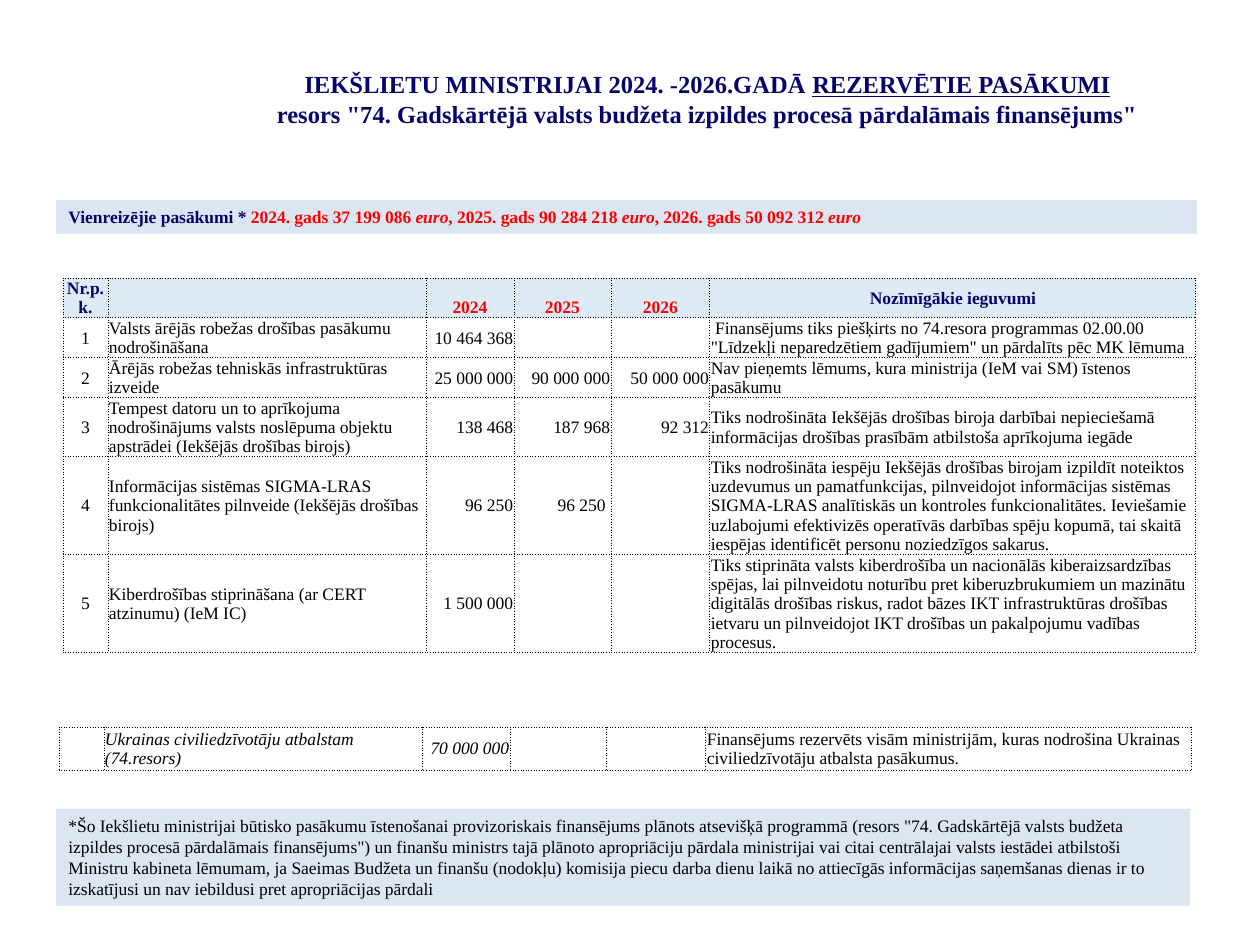
from lxml.etree import SubElement
from pptx import Presentation
from pptx.dml.color import RGBColor
from pptx.enum.shapes import MSO_SHAPE as Shape
from pptx.enum.text import MSO_ANCHOR as Anchor, MSO_AUTO_SIZE as Fit, PP_ALIGN as Align
from pptx.oxml.ns import qn
from pptx.util import Pt

SCALE = 914400 / 126  # EMU in one px


class Theme:
    font = "Times New Roman"
    navy, red, black = "04046C", "FF0000", "000000"
    bar, head = "DCE6F2", "DDEBF7"
    title, body = 14, 10
    rule = 0.5


TITLE = [
    [("IEKŠLIETU MINISTRIJAI 2024. -2026.GADĀ ", ""), ("REZERVĒTIE PASĀKUMI", "u")],
    [('resors "74. Gadskārtējā valsts budžeta izpildes procesā pārdalāmais finansējums"', "")],
]
YEARS = [
    ("2024. gads 37 199 086 ", "euro"),
    (", 2025. gads 90 284 218 ", "euro"),
    (", 2026. gads 50 092 312 ", "euro"),
]
NOTE = (
    "*Šo Iekšlietu ministrijai būtisko pasākumu īstenošanai provizoriskais finansējums plānots "
    'atsevišķā programmā (resors "74. Gadskārtējā valsts budžeta izpildes procesā pārdalāmais '
    'finansējums") un finanšu ministrs tajā plānoto apropriāciju pārdala ministrijai vai citai '
    "centrālajai valsts iestādei atbilstoši Ministru kabineta lēmumam, ja Saeimas Budžeta un "
    "finanšu (nodokļu) komisija piecu darba dienu laikā no attiecīgās informācijas saņemšanas "
    "dienas ir to izskatījusi un nav iebildusi pret apropriācijas pārdali"
)
HEAD = ["Nr.p.k.", "", "2024", "2025", "2026", "Nozīmīgākie ieguvumi"]
ITEMS = [
    ["1", "Valsts ārējās robežas drošības pasākumu nodrošināšana", "10 464 368", "", "",
     ' Finansējums tiks piešķirts no 74.resora programmas 02.00.00 "Līdzekļi neparedzētiem '
     'gadījumiem" un pārdalīts pēc MK lēmuma'],
    ["2", "Ārējās robežas tehniskās infrastruktūras izveide",
     "25 000 000", "90 000 000", "50 000 000",
     "Nav pieņemts lēmums, kura ministrija (IeM vai SM) īstenos pasākumu"],
    ["3", "Tempest datoru un to aprīkojuma nodrošinājums valsts noslēpuma objektu apstrādei "
     "(Iekšējās drošības birojs)", "138 468", "187 968", "92 312",
     "Tiks nodrošināta Iekšējās drošības biroja darbībai nepieciešamā informācijas drošības "
     "prasībām atbilstoša aprīkojuma iegāde"],
    ["4", "Informācijas sistēmas SIGMA-LRAS funkcionalitātes pilnveide (Iekšējās drošības birojs)",
     "96 250", "96 250 ", "",
     "Tiks nodrošināta iespēju Iekšējās drošības birojam izpildīt noteiktos uzdevumus un "
     "pamatfunkcijas, pilnveidojot informācijas sistēmas SIGMA-LRAS analītiskās un kontroles "
     "funkcionalitātes. Ieviešamie uzlabojumi efektivizēs operatīvās darbības spēju kopumā, "
     "tai skaitā iespējas identificēt personu noziedzīgos sakarus."],
    ["5", "Kiberdrošības stiprināšana (ar CERT atzinumu) (IeM IC)", "1 500 000", "", "",
     "Tiks stiprināta valsts kiberdrošība un nacionālās kiberaizsardzības spējas, lai "
     "pilnveidotu noturību pret kiberuzbrukumiem un mazinātu digitālās drošības riskus, "
     "radot bāzes IKT infrastruktūras drošības ietvaru un pilnveidojot IKT drošības un "
     "pakalpojumu vadības procesus."],
]
AID = ["", "Ukrainas civiliedzīvotāju atbalstam (74.resors)", "70 000 000", "", "",
       "Finansējums rezervēts visām ministrijām, kuras nodrošina Ukrainas civiliedzīvotāju "
       "atbalsta pasākumus."]

COLS = [45, 318, 88, 97, 99, 486]
ALIGNS = [Align.CENTER, Align.LEFT] + [Align.RIGHT] * 3 + [Align.LEFT]
MONEY = range(2, 5)


def px(n):
    return round(n * SCALE)


def rgb(code):
    return RGBColor.from_string(code)


def add_run(para, text, color, size=Theme.body, style=""):
    """Style holds any of the letters b, i and u."""
    run = para.add_run()
    run.text = text
    font = run.font
    font.name, font.size = Theme.font, Pt(size)
    font.color.rgb = rgb(color)
    font.bold, font.italic, font.underline = (key in style for key in "biu")


def add_bar(slide, left, top, width, height, runs):
    bar = slide.shapes.add_shape(Shape.RECTANGLE, *map(px, (left, top, width, height)))
    bar.shadow.inherit = False
    bar.fill.solid()
    bar.fill.fore_color.rgb = rgb(Theme.bar)
    bar.line.fill.background()
    frame = bar.text_frame
    frame.word_wrap = True
    frame.auto_size = Fit.SHAPE_TO_FIT_TEXT
    frame.vertical_anchor = Anchor.TOP
    para = frame.paragraphs[0]
    para.alignment = Align.LEFT
    for text, color, style in runs:
        add_run(para, text, color, style=style)


def add_rules(cell):
    """Dotted borders; they must come before the fill."""
    props = cell._tc.get_or_add_tcPr()
    for side in ("lnL", "lnR", "lnT", "lnB"):
        line = SubElement(props, qn("a:" + side), w=str(Pt(Theme.rule)))
        fill = SubElement(line, qn("a:solidFill"))
        SubElement(fill, qn("a:srgbClr"), val=Theme.black)
        SubElement(line, qn("a:prstDash"), val="sysDot")


def fill_cell(cell, text, align, color, style, anchor, back):
    add_rules(cell)
    if back:
        cell.fill.solid()
        cell.fill.fore_color.rgb = rgb(back)
    else:
        cell.fill.background()
    cell.margin_left = cell.margin_right = cell.margin_top = px(1)
    cell.margin_bottom = 0
    cell.vertical_anchor = anchor
    para = cell.text_frame.paragraphs[0]
    para.alignment = align
    if text:
        add_run(para, text, color, style=style)
    else:
        SubElement(para._p, qn("a:endParaRPr"), sz=str(Theme.body * 100))


def add_grid(slide, left, top, heights, rows, look):
    """Look gives align, colour, style, anchor and fill for a row and column."""
    grid = slide.shapes.add_table(
        len(rows), len(COLS), px(left), px(top), px(sum(COLS)), px(sum(heights))).table
    grid.first_row = grid.horz_banding = False
    for col, width in zip(grid.columns, COLS):
        col.width = px(width)
    for r, (height, row) in enumerate(zip(heights, rows)):
        grid.rows[r].height = px(height)
        for c, text in enumerate(row):
            fill_cell(grid.cell(r, c), text, *look(r, c))


def item_look(r, c):
    if r:
        return ALIGNS[c], Theme.black, "", Anchor.MIDDLE, None
    year = c in MONEY
    return (Align.CENTER, Theme.red if year else Theme.navy, "b",
            Anchor.BOTTOM if year else Anchor.MIDDLE, Theme.head)


def aid_look(r, c):
    style = "" if c == len(COLS) - 1 else "i"
    return ALIGNS[c], Theme.black, style, Anchor.MIDDLE, None


def add_title(slide):
    title = slide.shapes.title
    title.left, title.top, title.width, title.height = map(px, (194, 63, 1027, 118))
    frame = title.text_frame
    frame.word_wrap = True
    frame.auto_size = Fit.NONE
    frame.vertical_anchor = Anchor.TOP
    for n, runs in enumerate(TITLE):
        para = frame.add_paragraph() if n else frame.paragraphs[0]
        para.alignment = Align.CENTER
        for text, style in runs:
            add_run(para, text, Theme.navy, Theme.title, "b" + style)


def main():
    deck = Presentation()
    deck.slide_width, deck.slide_height = px(1260), px(945)
    slide = deck.slides.add_slide(deck.slide_layouts[5])
    add_title(slide)
    add_grid(slide, 63, 278, [39, 40, 40, 58, 98, 98], [HEAD] + ITEMS, item_look)
    add_bar(slide, 56, 809, 1134, 97, [(NOTE, Theme.black, "")])
    sums = [(text, Theme.red, style)
            for pair in YEARS for text, style in zip(pair, ("b", "bi"))]
    add_bar(slide, 56, 200, 1141, 34,
            [("Vienreizējie pasākumi * ", Theme.navy, "b")] + sums)
    add_grid(slide, 59, 727, [43], [AID], aid_look)
    deck.save("out.pptx")


if __name__ == "__main__":
    main()
